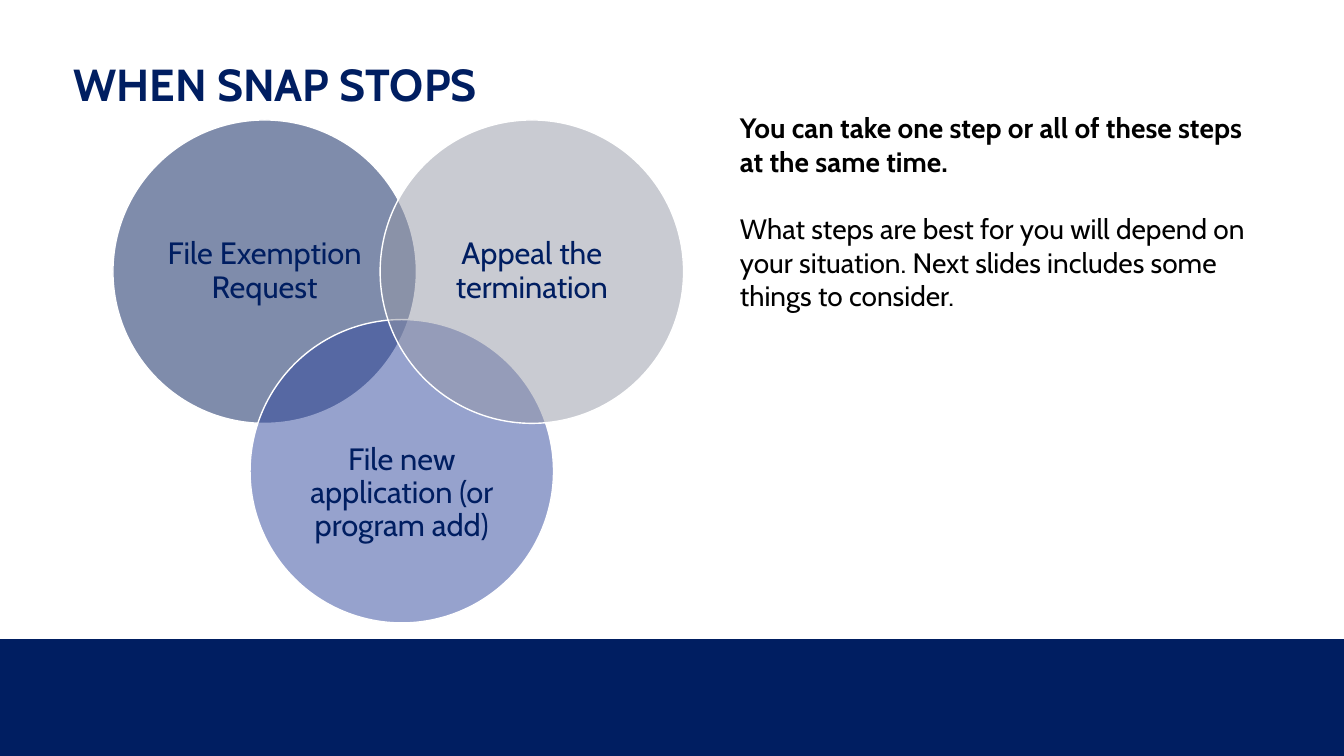
from lxml import etree
from pptx import Presentation
from pptx.dml.color import RGBColor
from pptx.enum import shapes, text
from pptx.oxml import ns
from pptx.util import Inches, Pt

# Content
TITLE = "WHEN SNAP STOPS"
STEPS = [  # label, circle left, circle top, fill, label drop
    ("File Exemption Request", 1.12, 1.19, "navy", 0),
    ("File new application (or program add)", 2.48, 3.17, "blue", 0.22),
    ("Appeal the termination", 3.77, 1.19, "gray", 0),
]
NOTES = [
    ("You can take one step or all of these steps at the same time.", True),
    ("What steps are best for you will depend on your situation. "
     "Next slides includes some things to consider.", False),
]
COLORS = {"ink": "001E61", "navy": "001B58", "blue": "2E469C",
          "gray": "9598A7", "white": "FFFFFF", "black": "000000"}
FONT = "Cabin"
SIZE = 3.01   # circle diameter
LABEL = 2.13  # side of the square inside a circle


def color(name):
    return RGBColor.from_string(COLORS[name])


def write(para, words, size, ink="ink", bold=False, align=None, line=None, before=None):
    para.alignment, para.line_spacing = align, line
    if before is not None:
        para.space_before = Pt(before)
    run = para.add_run()
    run.text = words
    font = run.font
    font.name, font.size, font.bold = FONT, Pt(size), bold
    font.color.rgb = color(ink)


def add_fill(kind, box, fill, alpha=None):
    shape = slide.shapes.add_shape(kind, *map(Inches, box))
    shape.shadow.inherit = False
    shape.fill.solid()
    shape.fill.fore_color.rgb = color(fill)
    if alpha is not None:
        tint = shape.fill._xPr.find(".//" + ns.qn("a:srgbClr"))
        etree.SubElement(tint, ns.qn("a:alpha"), val=str(alpha * 1000))
    return shape


def add_box(box):
    frame = slide.shapes.add_textbox(*map(Inches, box)).text_frame
    frame.word_wrap = True
    return frame


deck = Presentation()
deck.slide_width, deck.slide_height = Inches(13.33), Inches(7.5)
slide = deck.slides.add_slide(deck.slide_layouts[5])

# Bottom band
band = add_fill(shapes.MSO_SHAPE.RECTANGLE, (0, 6.34, 13.33, 1.16), "ink")
band.line.fill.background()

# Title
title = slide.shapes.title
title.left, title.top, title.width, title.height = map(Inches, (0.63, 0.46, 12.17, 0.81))
title.text_frame.vertical_anchor = text.MSO_ANCHOR.MIDDLE
write(title.text_frame.paragraphs[0], TITLE, 32, bold=True,
      align=text.PP_ALIGN.LEFT, line=0.9)

# Overlapping circles, each with a centred label
inset = (SIZE - LABEL) / 2
for words, left, top, fill, drop in STEPS:
    disc = add_fill(shapes.MSO_SHAPE.OVAL, (left, top, SIZE, SIZE), fill, alpha=50)
    disc.line.color.rgb = color("white")
    disc.line.width = Pt(1)
    frame = add_box((left + inset, top + inset + drop, LABEL, LABEL))
    frame.vertical_anchor = text.MSO_ANCHOR.MIDDLE
    frame.margin_left = frame.margin_right = Inches(0.09)
    frame.margin_top = frame.margin_bottom = Inches(0.09)
    write(frame.paragraphs[0], words, 22, align=text.PP_ALIGN.CENTER, line=0.9)

# Notes on the right
frame = add_box((7.24, 1.05, 5.22, 2.46))
for i, (words, bold) in enumerate(NOTES):
    para = frame.add_paragraph() if i else frame.paragraphs[0]
    write(para, words, 20, ink="black", bold=bold, before=24 if i else None)

deck.save("out.pptx")
